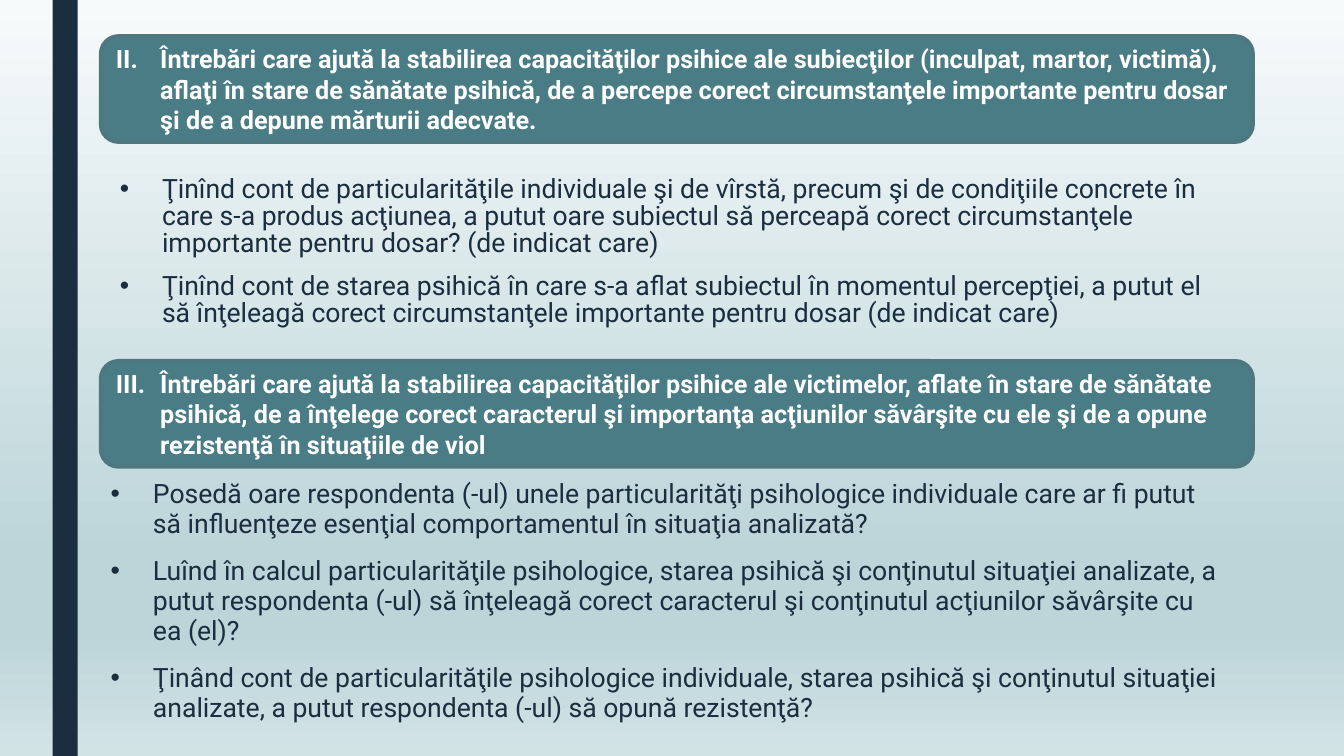
from lxml import etree
from pptx import Presentation
from pptx.dml.color import RGBColor
from pptx.enum.shapes import MSO_SHAPE
from pptx.enum.text import MSO_ANCHOR, PP_ALIGN
from pptx.oxml.ns import qn
from pptx.util import Pt

RECT, ROUNDED = MSO_SHAPE.RECTANGLE, MSO_SHAPE.ROUNDED_RECTANGLE
MIDDLE, TOP = MSO_ANCHOR.MIDDLE, MSO_ANCHOR.TOP
LEFT = PP_ALIGN.LEFT

NAVY, TEAL, TEAL_EDGE, WHITE = "1A2E40", "4A7C85", "4E777F", "FFFFFF"
BACKDROP = [(0, "F7FAFB"), (74, "BCD5D9"), (83, "BCD5D9"), (100, "D2E3E6")]

PERCEPTION_HEADING = (
    "Întrebări care ajută la stabilirea capacităţilor psihice ale subiecţilor "
    "(inculpat, martor, victimă), aflaţi în stare de sănătate psihică, de a percepe "
    "corect circumstanţele importante pentru dosar şi de a depune mărturii adecvate.")
PERCEPTION_QUESTIONS = [
    "Ţinînd cont de particularităţile individuale şi de vîrstă, precum şi de condiţiile "
    "concrete în care s-a produs acţiunea, a putut oare subiectul să perceapă corect "
    "circumstanţele importante pentru dosar? (de indicat care)",
    "Ţinînd cont de starea psihică în care s-a aflat subiectul în momentul percepţiei, "
    "a putut el să înţeleagă corect circumstanţele importante pentru dosar "
    "(de indicat care)",
]
RESISTANCE_HEADING = (
    "Întrebări care ajută la stabilirea capacităţilor psihice ale victimelor, aflate în "
    "stare de sănătate psihică, de a înţelege corect caracterul şi importanţa acţiunilor "
    "săvârşite cu ele şi de a opune rezistenţă în situaţiile de viol")
RESISTANCE_QUESTIONS = [
    "Posedă oare respondenta (-ul) unele particularităţi psihologice individuale care ar "
    "fi putut să influenţeze esenţial comportamentul în situaţia analizată?",
    "Luînd în calcul particularităţile psihologice, starea psihică şi conţinutul "
    "situaţiei analizate, a putut respondenta (-ul) să înţeleagă corect caracterul şi "
    "conţinutul acţiunilor săvârşite cu ea (el)?",
    "Ţinând cont de particularităţile psihologice individuale, starea psihică şi "
    "conţinutul situaţiei analizate, a putut respondenta (-ul) să opună rezistenţă?",
]


def rgb(value):
    return RGBColor.from_string(value)


def set_all(target, values):
    for name, value in values.items():
        setattr(target, name, value)


class QuestionSlide:
    font = "Roboto"

    def __init__(self, slide):
        self.slide = slide

    def backdrop(self, stops):
        """Fill the background with a top-to-bottom gradient of (percent, colour) stops."""
        fill = self.slide.background.fill
        fill.gradient()
        fill.gradient_angle = 270
        stop_list = next(self.slide.element.iter(qn("a:gsLst")))
        for old_stop in list(stop_list):
            stop_list.remove(old_stop)
        for percent, colour in stops:
            stop = etree.SubElement(stop_list, qn("a:gs"), pos=str(percent * 1000))
            etree.SubElement(stop, qn("a:srgbClr"), val=colour)

    def panel(self, kind, left, top, width, height, colour, edge=None):
        panel = self.slide.shapes.add_shape(kind, Pt(left), Pt(top), Pt(width), Pt(height))
        panel.shadow.inherit = False
        panel.fill.solid()
        panel.fill.fore_color.rgb = rgb(colour)
        if edge:
            panel.line.color.rgb = rgb(edge)
            panel.line.width = Pt(2.75)
        else:
            panel.line.fill.background()
        return panel

    def list_item(self, paragraph, text, size, colour, bold, indent, marker, **marker_values):
        """Fill one hanging paragraph led by a bullet or an automatic number."""
        paragraph.alignment = LEFT
        run = paragraph.add_run()
        run.text = text
        set_all(run.font, {"name": self.font, "size": Pt(size), "bold": bold})
        run.font.color.rgb = rgb(colour)
        properties = paragraph._p.get_or_add_pPr()
        properties.set("marL", str(Pt(indent)))
        properties.set("indent", str(-Pt(indent)))
        if marker == "a:buChar":
            etree.SubElement(properties, qn("a:buFont"), typeface="Arial")
        etree.SubElement(properties, qn(marker), **marker_values)

    def heading(self, top, number, text):
        banner = self.panel(ROUNDED, 72, top, 823, 75.6, TEAL, TEAL_EDGE)
        frame = banner.text_frame
        set_all(frame, {"word_wrap": True, "vertical_anchor": MIDDLE})
        self.list_item(frame.paragraphs[0], text, 18, WHITE, True, 31.7,
                       "a:buAutoNum", type="romanUcPeriod", startAt=str(number))

    def questions(self, left, top, width, height, spacing, texts):
        box = self.slide.shapes.add_textbox(Pt(left), Pt(top), Pt(width), Pt(height))
        frame = box.text_frame
        set_all(frame, {"word_wrap": True, "vertical_anchor": TOP,
                        "margin_top": 0, "margin_bottom": 0})
        for index, text in enumerate(texts):
            question = frame.add_paragraph() if index else frame.paragraphs[0]
            set_all(question, {"line_spacing": spacing, "space_after": Pt(2),
                               "space_before": Pt(10 if index else 0)})
            self.list_item(question, text, 19, NAVY, False, 30.2, "a:buChar", char="•")


def main():
    deck = Presentation()
    set_all(deck, {"slide_width": Pt(960), "slide_height": Pt(540)})
    blank_layout = deck.slide_layouts[6]
    page = QuestionSlide(deck.slides.add_slide(blank_layout))
    page.backdrop(BACKDROP)
    page.panel(RECT, 37.5, 0, 18, 540, NAVY)
    page.questions(72, 342.6, 805.7, 183, 0.94, RESISTANCE_QUESTIONS)
    page.heading(25.8, 2, PERCEPTION_HEADING)
    page.heading(257.8, 3, RESISTANCE_HEADING)
    page.questions(78.5, 126.5, 799.2, 116, 0.84, PERCEPTION_QUESTIONS)
    deck.save("out.pptx")


if __name__ == "__main__":
    main()
